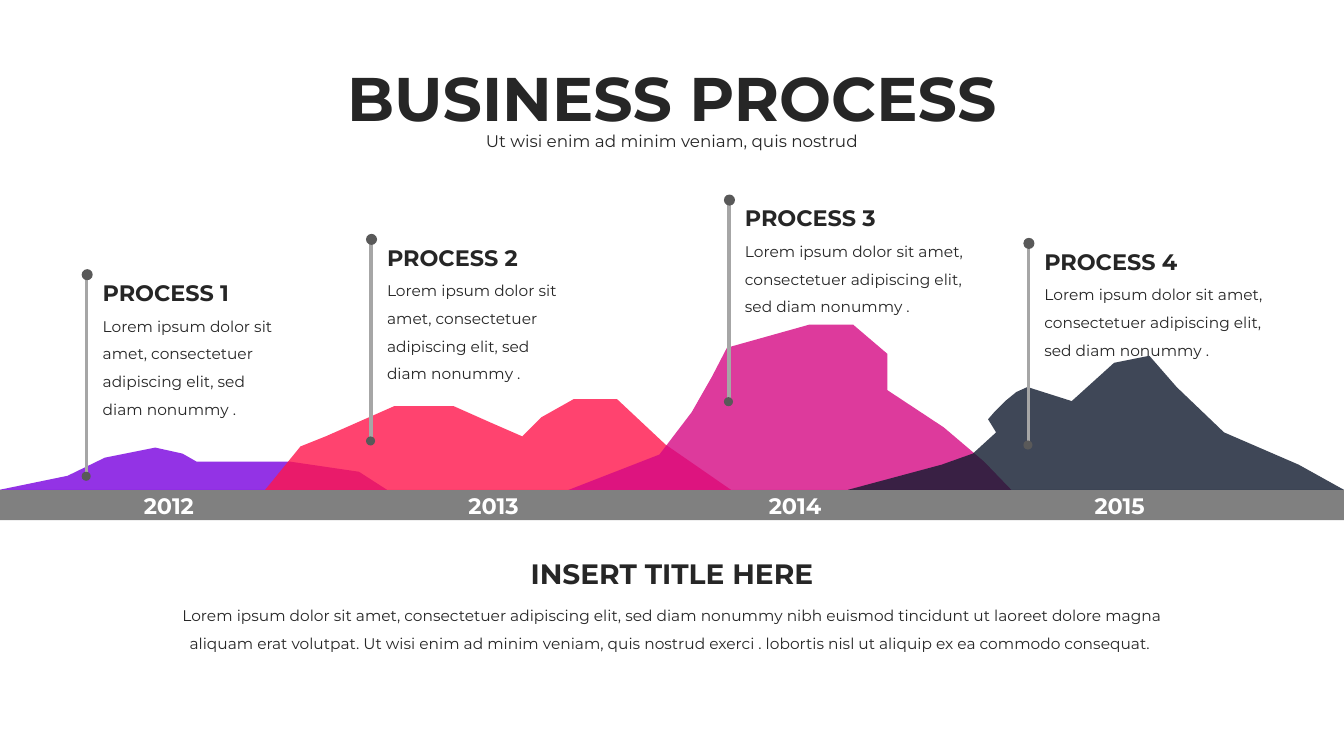
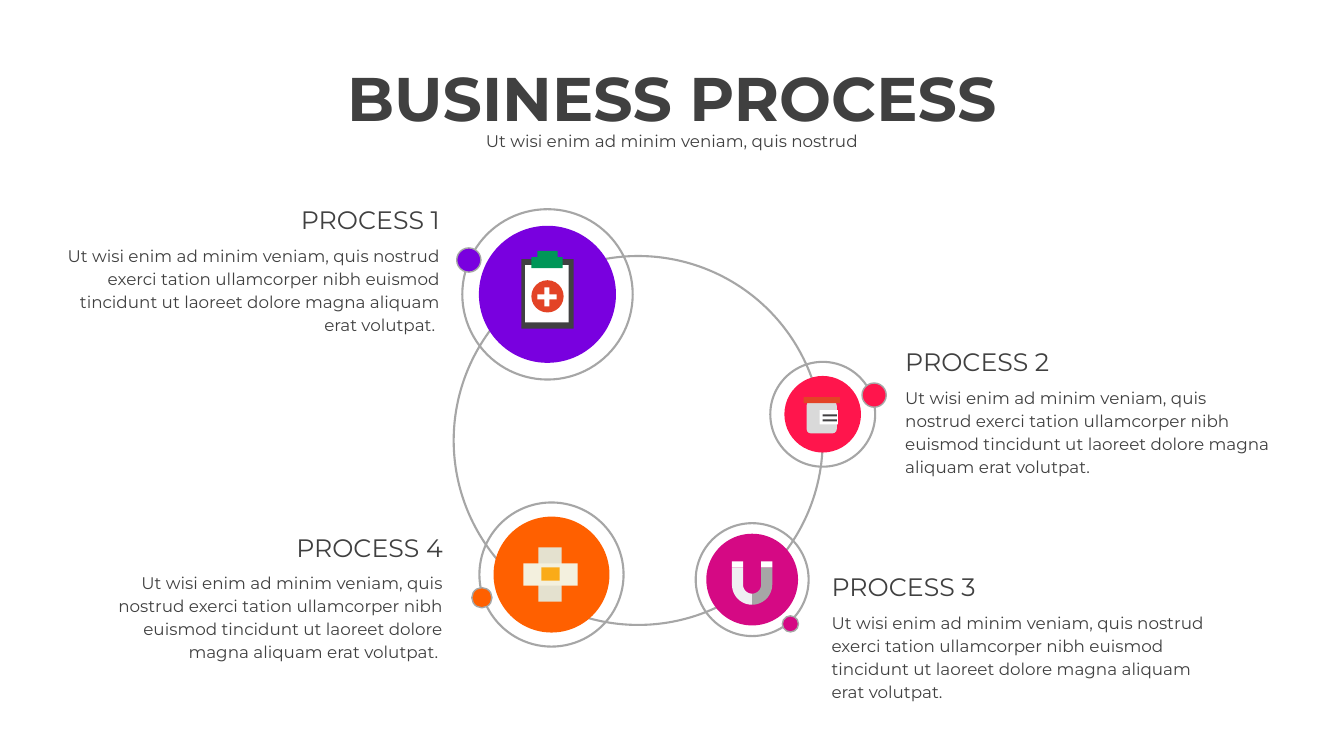
from dataclasses import dataclass
from math import cos, pi, sin

from lxml import etree
from pptx import Presentation
from pptx.dml.color import RGBColor
from pptx.enum.shapes import MSO_CONNECTOR, MSO_SHAPE
from pptx.enum.text import MSO_ANCHOR, PP_ALIGN
from pptx.oxml.ns import qn
from pptx.util import Pt

PX = 9144
RECT, OVAL = MSO_SHAPE.RECTANGLE, MSO_SHAPE.OVAL
ROUND, CROSS = MSO_SHAPE.ROUNDED_RECTANGLE, MSO_SHAPE.CROSS
FREE = "free"
STRAIGHT = MSO_CONNECTOR.STRAIGHT
LEFT, MID, RIGHT = PP_ALIGN.LEFT, PP_ALIGN.CENTER, PP_ALIGN.RIGHT
TOP, CENTER = MSO_ANCHOR.TOP, MSO_ANCHOR.MIDDLE


@dataclass(frozen=True)
class Theme:
    font: str = "Montserrat"
    ink: str = "262626"
    soft: str = "404040"
    white: str = "FFFFFF"
    band: str = "808080"
    line: str = "A6A6A6"
    dot: str = "595959"
    violet: str = "7900DF"
    red: str = "FF154C"
    pink: str = "D50984"
    navy: str = "101A2E"
    orange: str = "FF6000"
    dark: str = "414042"
    brick: str = "E34326"
    green: str = "009658"
    jar: str = "D9D9D9"
    steel: str = "EFEFF2"
    sand: str = "E4E1CF"
    cream: str = "F3F0DE"
    amber: str = "FAAB18"
    title: int = 44
    head: int = 20
    label: int = 18
    mark: int = 16
    body: int = 12
    small: int = 11


T = Theme()


def write(slide, text, box, size, color=T.ink, bold=False, align=LEFT, space=1.0, anchor=TOP):
    frame = slide.shapes.add_textbox(*[v * PX for v in box]).text_frame
    frame.word_wrap = True
    frame.vertical_anchor = anchor
    para = frame.paragraphs[0]
    para.alignment = align
    para.line_spacing = space
    run = para.add_run()
    run.text = text
    run.font.name = T.font
    run.font.size = Pt(size)
    run.font.bold = bold
    run.font.color.rgb = RGBColor.from_string(color)


def draw(slide, kind, place, fill=None, edge=None, width=1.0, alpha=None):
    if kind == FREE:
        points = [(x * PX, y * PX) for x, y in place]
        pen = slide.shapes.build_freeform(*points[0], scale=1.0)
        pen.add_line_segments(points[1:], close=True)
        shape = pen.convert_to_shape()
    else:
        shape = slide.shapes.add_shape(kind, *[int(v * PX) for v in place])
    shape.shadow.inherit = False
    if fill:
        shape.fill.solid()
        shape.fill.fore_color.rgb = RGBColor.from_string(fill)
    else:
        shape.fill.background()
    if alpha:
        tint = shape._element.spPr.find(".//" + qn("a:srgbClr"))
        etree.SubElement(tint, qn("a:alpha")).set("val", str(alpha * 1000))
    if edge:
        shape.line.color.rgb = RGBColor.from_string(edge)
        shape.line.width = Pt(width)
    else:
        shape.line.fill.background()
    return shape


deck = Presentation()
deck.slide_width, deck.slide_height = 1333 * PX, 750 * PX
blank = deck.slide_layouts[6]
peaks, ring = deck.slides.add_slide(blank), deck.slides.add_slide(blank)

for slide, color in ((peaks, T.ink), (ring, T.soft)):
    write(slide, "BUSINESS PROCESS", (76, 63, 1181, 73), T.title, color,
          bold=True, align=MID, space=0.9)
    write(slide, "Ut wisi enim ad minim veniam, quis nostrud", (186, 128, 961, 26),
          T.body, color, align=MID, space=0.9, anchor=CENTER)

draw(peaks, RECT, (0, 486, 1333, 30), T.band)
hills = (
    (T.violet, [(-1, 486), (67, 472), (104, 454), (154, 444), (181, 450), (195, 458),
                (288, 458), (356, 468), (384, 486)]),
    (T.red, [(263, 486), (298, 443), (323, 433), (391, 403), (450, 403), (486, 419),
             (518, 433), (537, 414), (569, 396), (612, 396), (660, 441), (725, 486)]),
    (T.pink, [(564, 486), (654, 451), (686, 409), (706, 374), (721, 345), (803, 322),
              (846, 322), (880, 351), (880, 387), (936, 424), (976, 458), (1003, 486)]),
    (T.navy, [(841, 486), (934, 461), (965, 450), (988, 429), (980, 416), (987, 408),
              (997, 398), (1008, 389), (1019, 384), (1063, 398), (1105, 360), (1140, 353),
              (1167, 384), (1214, 429), (1288, 461), (1333, 486)]),
)
for color, points in hills:
    draw(peaks, FREE, points, color, alpha=80)

write(peaks, "INSERT TITLE HERE", (477, 547, 379, 44), T.head, bold=True, align=MID)
write(peaks, "Lorem ipsum dolor sit amet, consectetuer adipiscing elit, sed diam nonummy "
      "nibh euismod tincidunt ut laoreet dolore magna aliquam erat volutpat. Ut wisi enim "
      "ad minim veniam, quis nostrud exerci . lobortis nisl ut aliquip ex ea commodo "
      "consequat. ", (168, 587, 998, 63), T.small, align=MID, space=1.5)

pins = ((86, 267, 202, 108), (368, 232, 202, 430), (723, 193, 255, 729), (1020, 236, 255, 1051))
for i, (x, y, wide, left) in enumerate(pins):
    write(peaks, str(2012 + i), (left, 483, 119, 37), T.mark, T.white, bold=True, align=MID)
    write(peaks, f"PROCESS {i + 1}", (x + 6, y + 5, 171, 37), T.mark, bold=True)
    stem = peaks.shapes.add_connector(STRAIGHT, x * PX, (y + 205) * PX, x * PX, (y + 7) * PX)
    stem.line.color.rgb = RGBColor.from_string(T.line)
    stem.line.width = Pt(2.25)
    etree.SubElement(stem._element.spPr, qn("a:effectLst"))
    draw(peaks, OVAL, (x - 5, y, 11, 11), T.dot)
    draw(peaks, OVAL, (x - 5, y + 201, 9, 9), T.dot)
    write(peaks, "Lorem ipsum dolor sit amet, consectetuer adipiscing elit, sed diam nonummy .",
          (x + 6, y + 33, wide, 118), T.small, space=1.5)

draw(ring, OVAL, (450, 254, 366, 366), edge=T.line, width=1.5)
nodes = (
    (T.violet, 543, 292, 136, 169, 465, 258, 24),
    (T.red, 816, 411, 76, 104, 867, 392, 24),
    (T.orange, 547, 570, 115, 143, 478, 593, 20),
    (T.pink, 746, 575, 91, 112, 784, 619, 16),
)
for color, x, y, disc, halo, dot_x, dot_y, dot in nodes:
    draw(ring, OVAL, (x - disc / 2, y - disc / 2, disc, disc), color)
    draw(ring, OVAL, (x - halo / 2, y - halo / 2, halo, halo), edge=T.line, width=1.5)
    draw(ring, OVAL, (dot_x - dot / 2, dot_y - dot / 2, dot, dot), color, edge=T.line)

jar = draw(ring, ROUND, (800, 398, 30, 32), T.jar)
jar.adjustments[0] = 0.15
board = [(553, 255), (553, 249), (533, 249), (533, 255), (527, 255), (527, 266),
         (558, 266), (558, 255)]
parts = (
    (RECT, (797, 394, 36, 6), T.brick),
    (RECT, (813, 407, 18, 14), T.white),
    (RECT, (816, 416, 14, 2), T.dark),
    (RECT, (816, 411, 14, 2), T.dark),
    (RECT, (534, 543, 23, 54), T.sand),
    (RECT, (519, 559, 54, 22), T.cream),
    (RECT, (537, 563, 18, 13), T.amber),
    (RECT, (517, 257, 52, 69), T.dark),
    (RECT, (521, 263, 43, 57), T.white),
    (FREE, board, T.green),
    (OVAL, (527, 278, 32, 32), T.brick),
)
for kind, place, color in parts:
    draw(ring, kind, place, color)
plus = draw(ring, CROSS, (533, 285, 19, 19), T.white)
plus.adjustments[0] = 0.37

turns = [pi / 2 * i / 12 for i in range(13)]
for side, color in ((-1, T.steel), (1, T.line)):
    outer = [(746 + side * 20 * cos(a), 580 + 20 * sin(a)) for a in turns]
    inner = [(746 + side * 9 * cos(a), 580 + 9 * sin(a)) for a in reversed(turns)]
    ends = [(746 + side * 9, 563), (746 + side * 20, 563)]
    draw(ring, FREE, outer + inner + ends, color)
    draw(ring, RECT, (min(ends)[0], 557, 11, 6), T.white)

notes = (
    (1, 446, 198, 389, RIGHT),
    (2, 888, 339, 386, LEFT),
    (3, 815, 562, 394, LEFT),
    (4, 449, 523, 378, RIGHT),
)
story = ("Ut wisi enim ad minim veniam, quis nostrud exerci tation ullamcorper nibh euismod "
         "tincidunt ut laoreet dolore magna aliquam erat volutpat.")
for num, x, y, wide, align in notes:
    back = align == RIGHT
    write(ring, f"PROCESS {num}", (x - 223 * back, y, 223, 40), T.label, T.soft, align=align)
    write(ring, story + " " * back, (x - wide * back, y + 38, wide, 101), T.body, T.soft,
          align=align, space=1.14)

deck.save("out.pptx")
